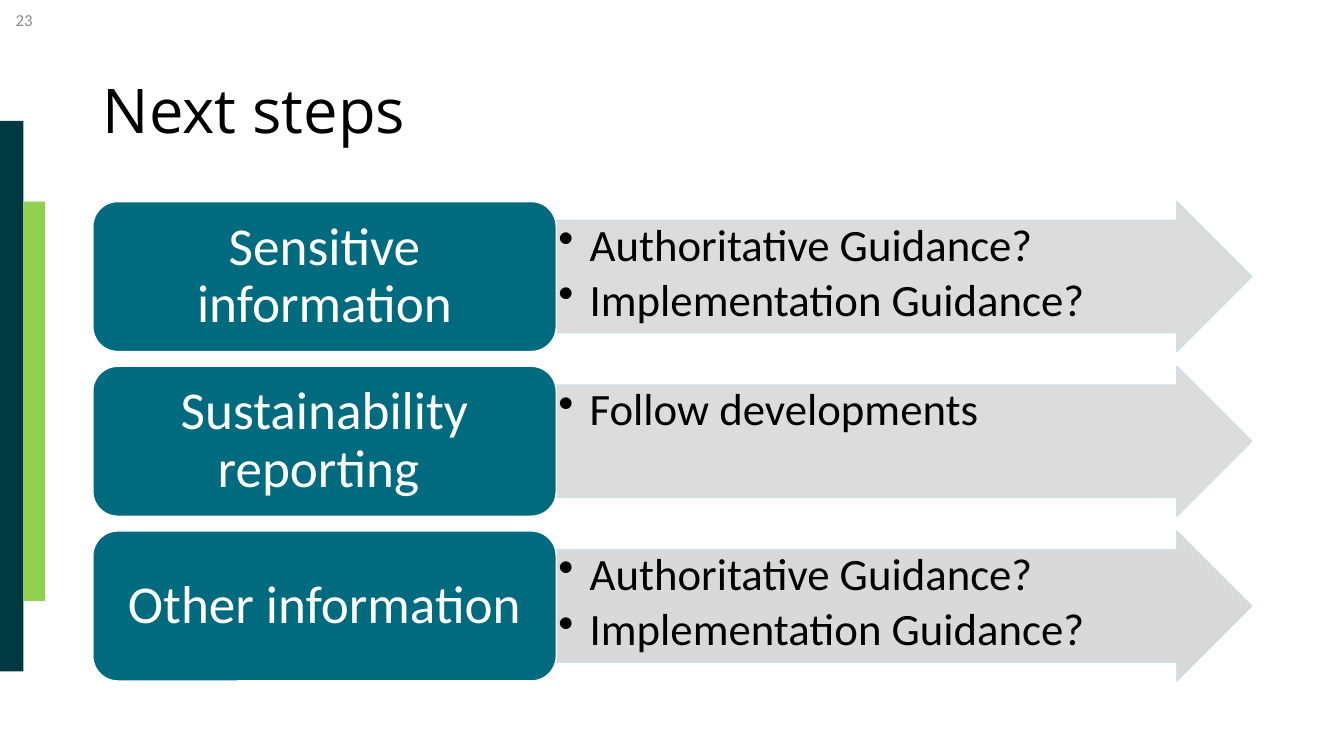
from lxml.etree import SubElement
from pptx import Presentation
from pptx.dml.color import RGBColor
from pptx.enum.shapes import MSO_SHAPE
from pptx.enum.text import MSO_ANCHOR, PP_ALIGN
from pptx.oxml.ns import qn
from pptx.util import Cm, Pt

BLACK = RGBColor(0x00, 0x00, 0x00)
WHITE = RGBColor(0xFF, 0xFF, 0xFF)
GREY = RGBColor(0x8C, 0x8C, 0x8C)
DARK_TEAL = RGBColor(0x00, 0x3A, 0x40)
GREEN = RGBColor(0x92, 0xD0, 0x50)
TEAL = RGBColor(0x00, 0x6A, 0x7E)
ARROW_GREY = RGBColor(0xD9, 0xD9, 0xD9)
ARROW_EDGE = RGBColor(0xCD, 0xE0, 0xE8)

TITLE = "Next steps"
PAGE_NUMBER = "23"
# label, actions, opacity of the arrow in percent
STEPS = [
    ("Sensitive information", ["Authoritative Guidance?", "Implementation Guidance?"], 90),
    ("Sustainability reporting ", ["Follow developments"], 90),
    ("Other information", ["Authoritative Guidance?", "Implementation Guidance?"], 100),
]
# left, top, width, height in cm
SIDE_BARS = [(0, 3.05, 0.59, 13.87, DARK_TEAL), (0.59, 5.08, 0.54, 10.06, GREEN)]

LEFT, FIRST_TOP, PITCH = 2.34, 5.08, 4.15
LABEL_WIDTH, ARROW_WIDTH, ROW_HEIGHT = 11.68, 17.53, 3.78
INDENT = 0.79


def set_opacity(fill_parent, percent):
    color = fill_parent.find(qn("a:solidFill"))[0]
    SubElement(color, qn("a:alpha"), val=str(percent * 1000))


def add_block(page, kind, left, top, width, height, fill, edge=None):
    block = page.shapes.add_shape(kind, Cm(left), Cm(top), Cm(width), Cm(height))
    block.shadow.inherit = False
    block.fill.solid()
    block.fill.fore_color.rgb = fill
    if edge is None:
        block.line.fill.background()
    else:
        block.line.color.rgb = edge
        block.line.width = Pt(1)
    return block


def write(box, lines, size, color, font="Calibri", align=PP_ALIGN.LEFT,
          anchor=MSO_ANCHOR.MIDDLE, insets=(0.25, 0.13), spacing=0.9,
          after=0, bullet=False):
    """Fill the box with one paragraph per line; insets are (sides, top and bottom) in cm."""
    frame = box.text_frame
    frame.word_wrap = True
    frame.vertical_anchor = anchor
    frame.margin_left = frame.margin_right = Cm(insets[0])
    frame.margin_top = frame.margin_bottom = Cm(insets[1])
    for index, line in enumerate(lines):
        para = frame.add_paragraph() if index else frame.paragraphs[0]
        para.alignment = align
        para.line_spacing = spacing
        para.space_after = Pt(after)
        if bullet:
            properties = para._p.get_or_add_pPr()
            properties.set("marL", str(Cm(INDENT)))
            properties.set("indent", str(-Cm(INDENT)))
            SubElement(properties, qn("a:buChar"), char="•")
        span = para.add_run()
        span.text = line
        span.font.name = font
        span.font.size = Pt(size)
        span.font.color.rgb = color


def add_step(page, top, label, actions, opacity):
    arrow = add_block(page, MSO_SHAPE.RIGHT_ARROW, LEFT + LABEL_WIDTH, top,
                      ARROW_WIDTH, ROW_HEIGHT, ARROW_GREY, ARROW_EDGE)
    arrow.adjustments[0] = 0.75
    arrow.adjustments[1] = 0.5
    if opacity < 100:
        set_opacity(arrow._element.spPr, opacity)
    set_opacity(arrow.line._get_or_add_ln(), 90)
    write(arrow, actions, 32, BLACK, anchor=MSO_ANCHOR.TOP,
          insets=(0.05, 0.05), after=4.8, bullet=True)

    box = add_block(page, MSO_SHAPE.ROUNDED_RECTANGLE, LEFT, top,
                    LABEL_WIDTH, ROW_HEIGHT, TEAL, WHITE)
    write(box, [label], 38, WHITE, align=PP_ALIGN.CENTER, insets=(0.4, 0.2))


def main():
    deck = Presentation()
    deck.slide_width, deck.slide_height = Cm(33.87), Cm(19.05)
    page = deck.slides.add_slide(deck.slide_layouts[6])

    for *place, color in SIDE_BARS:
        add_block(page, MSO_SHAPE.RECTANGLE, *place, color)

    title = page.shapes.add_textbox(Cm(LEFT), Cm(1.02), Cm(29.21), Cm(3.68))
    write(title, [TITLE], 44, BLACK, font="Open Sans")

    for row, step in enumerate(STEPS):
        add_step(page, FIRST_TOP + row * PITCH, *step)

    number = page.shapes.add_textbox(Cm(0), Cm(0), Cm(1.07), Cm(1.02))
    write(number, [PAGE_NUMBER], 12, GREY, align=PP_ALIGN.RIGHT, spacing=1.0)

    deck.save("out.pptx")


if __name__ == "__main__":
    main()
